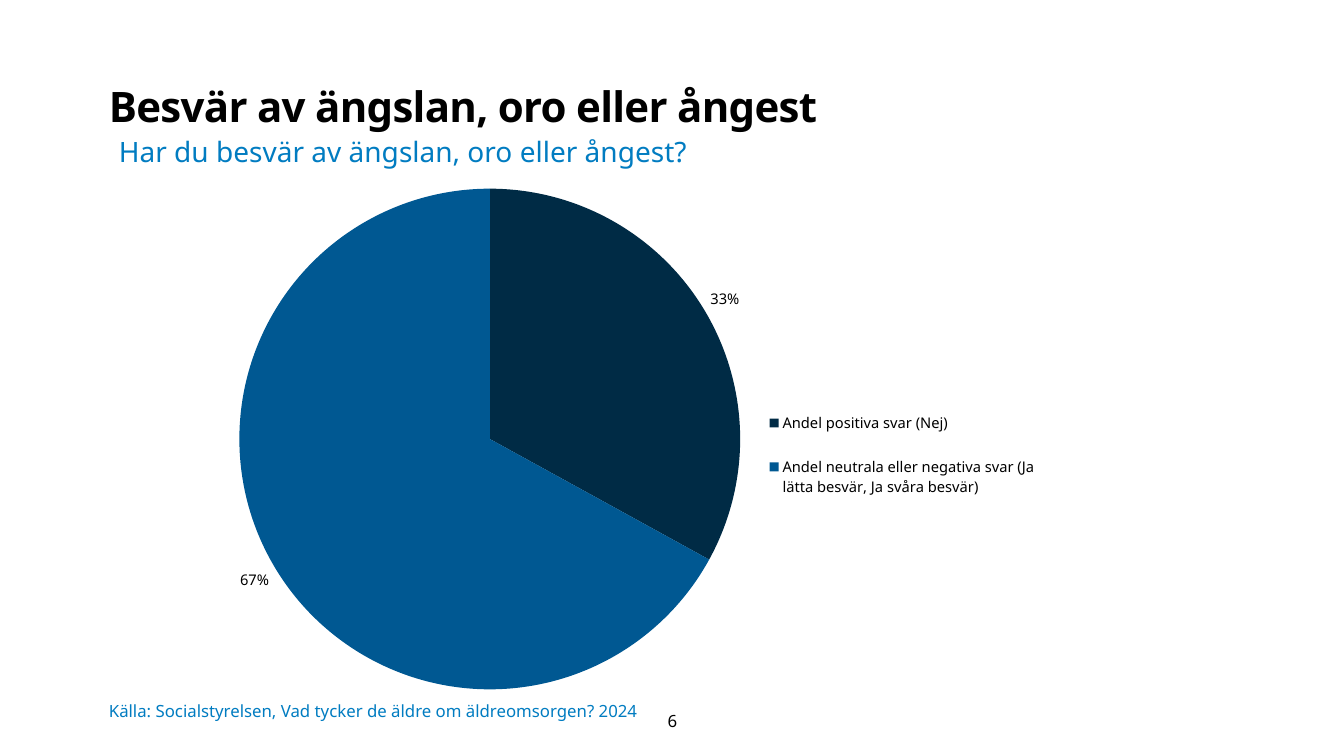
import pptx
import pptx.chart.data
import pptx.dml.color
import pptx.enum.chart
import pptx.enum.text
import pptx.oxml
import pptx.oxml.ns
import pptx.util

PX = 9144  # 100 px to the inch
FACE = "Noto Sans"
BLACK, BLUE = "000000", "017CC1"
SLICES = [
    ("Andel positiva svar (Nej)", 0.33, "002B45"),
    ("Andel neutrala eller negativa svar (Ja lätta besvär, Ja svåra besvär)",
     0.67, "005892"),
]


def tint(code):
    return pptx.dml.color.RGBColor.from_string(code)


def scale(*box):
    return [n * PX for n in box]


def style(font, size, color=BLACK, bold=False):
    font.name = FACE
    font.size = pptx.util.Pt(size)
    font.bold = bold
    font.color.rgb = tint(color)


def write(frame, text, size, color=BLACK, bold=False, align="LEFT",
          anchor="TOP", inset=(10, 5, 10, 5)):
    """Fill a text frame with one formatted run and return that run."""
    frame.word_wrap = True
    frame.auto_size = pptx.enum.text.MSO_AUTO_SIZE.NONE
    frame.vertical_anchor = pptx.enum.text.MSO_ANCHOR[anchor]
    (frame.margin_left, frame.margin_top,
     frame.margin_right, frame.margin_bottom) = scale(*inset)
    para = frame.paragraphs[0]
    para.alignment = pptx.enum.text.PP_ALIGN[align]
    run = para.add_run()
    run.text = text
    style(run.font, size, color, bold)
    return run


def label(slide, box, text, size, **form):
    frame = slide.shapes.add_textbox(*scale(*box)).text_frame
    write(frame, text, size, **form)


def head(slide, box, text):
    title = slide.shapes.title
    title.left, title.top, title.width, title.height = scale(*box)
    run = write(title.text_frame, text, 30, bold=True, inset=(0, 0, 10, 5))
    run.font._element.set("spc", "-50")
    title.text_frame.paragraphs[0].line_spacing = 1.1


def place(parent, index, x, y, w, h, inner=False):
    """Give a chart part a fixed place, in fractions of the chart."""
    for old in parent.findall(pptx.oxml.ns.qn("c:layout")):
        parent.remove(old)
    target = '<c:layoutTarget val="inner"/>' if inner else ""
    modes = "".join(f'<c:{k}Mode val="edge"/>' for k in "xy")
    sizes = "".join(f'<c:{k} val="{v}"/>'
                    for k, v in zip("xywh", (x, y, w, h)))
    space = pptx.oxml.ns.nsdecls("c")
    parent.insert(index, pptx.oxml.parse_xml(
        f"<c:layout {space}><c:manualLayout>{target}{modes}{sizes}"
        "</c:manualLayout></c:layout>"))


def pie(slide, box):
    kinds = pptx.enum.chart
    data = pptx.chart.data.CategoryChartData(number_format="0%")
    data.categories = [name for name, _, _ in SLICES]
    data.add_series("Series 1", [share * 100 for _, share, _ in SLICES])
    chart = slide.shapes.add_chart(
        kinds.XL_CHART_TYPE.PIE, *scale(*box), data).chart
    style(chart.font, 10)
    chart.has_title = False
    plot = chart.plots[0]
    plot.vary_by_categories = True
    for i, (_, _, color) in enumerate(SLICES):
        fill = plot.series[0].points[i].format.fill
        fill.solid()
        fill.fore_color.rgb = tint(color)

    tags = plot.series[0].data_labels
    tags.show_percentage = True
    tags.show_value = False
    tags.number_format = "0%"
    tags.number_format_is_linked = False
    tags.position = kinds.XL_LABEL_POSITION.OUTSIDE_END
    style(tags.font, 10.5)

    chart.has_legend = True
    key = chart.legend
    key.position = kinds.XL_LEGEND_POSITION.RIGHT
    key.include_in_layout = False
    style(key.font, 10.5)
    place(key._element, 1, 0.63, 0.41, 0.29, 0.25)
    place(chart._chartSpace.chart.plotArea, 0, 0.1, 0.03, 0.51, 0.95, True)


def main():
    deck = pptx.Presentation()
    deck.slide_width, deck.slide_height = scale(1333, 750)
    slide = deck.slides.add_slide(deck.slide_layouts[5])
    head(slide, (108, 75, 974, 142), "Besvär av ängslan, oro eller ångest")
    label(slide, (108, 129, 878, 44),
          "Har du besvär av ängslan, oro eller ångest?", 20, color=BLUE)
    pie(slide, (140, 171, 974, 524))
    label(slide, (616, 695, 102, 40), "6", 12, align="CENTER",
          anchor="MIDDLE")
    label(slide, (108, 681, 879, 49),
          "Källa: Socialstyrelsen, Vad tycker de äldre om äldreomsorgen? 2024",
          12, color=BLUE, anchor="MIDDLE", inset=(0, 0, 0, 0))
    deck.save("out.pptx")


if __name__ == "__main__":
    main()
